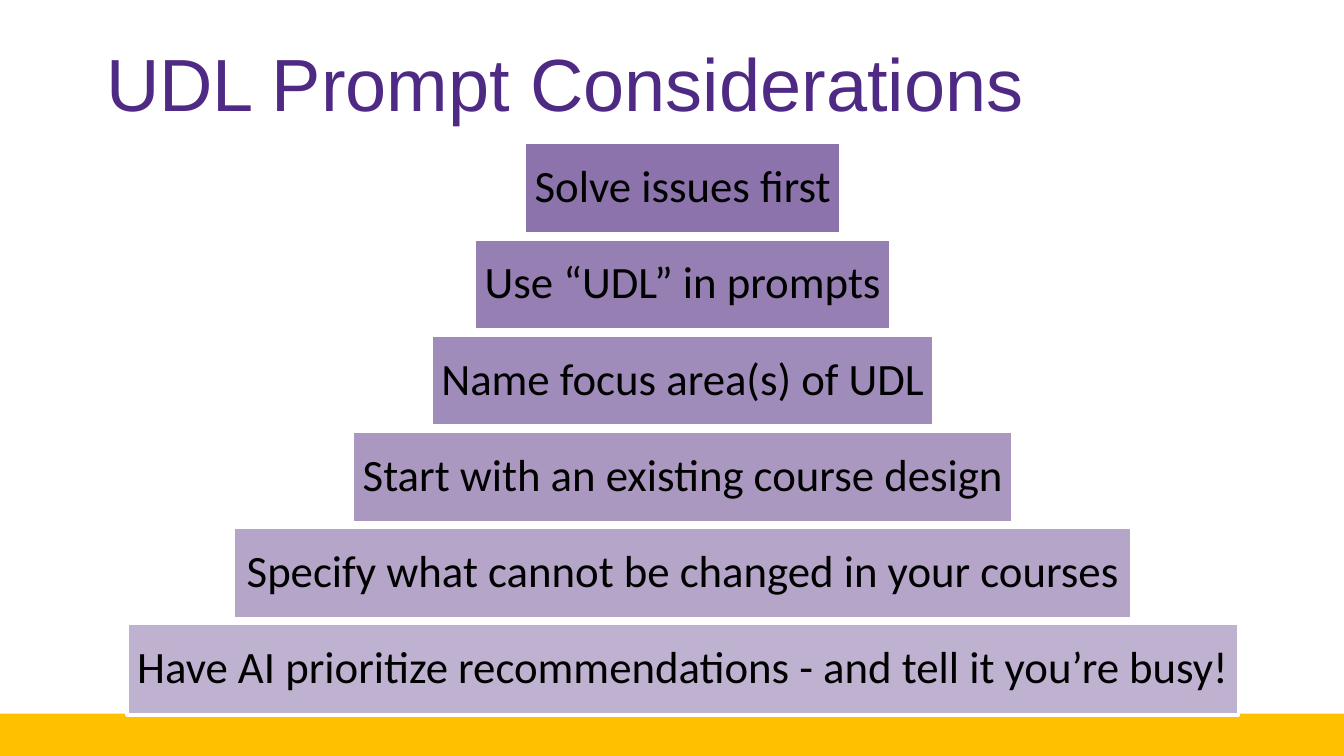
from lxml.etree import SubElement
from pptx import Presentation
from pptx.dml.color import RGBColor
from pptx.enum.shapes import MSO_SHAPE
from pptx.enum.text import MSO_ANCHOR, MSO_AUTO_SIZE, PP_ALIGN
from pptx.oxml.ns import qn
from pptx.util import Inches, Pt

COLORS = {
    "band": "FFC000",
    "title": "4E2A84",
    "step": "8064A2",
    "edge": "FFFFFF",
    "text": "000000",
}
STEPS = [
    ("Solve issues first", 2.36),
    ("Use “UDL” in prompts", 3.1),
    ("Name focus area(s) of UDL", 3.74),
    ("Start with an existing course design", 4.92),
    ("Specify what cannot be changed in your courses", 6.69),
    ("Have AI prioritize recommendations - and tell it you’re busy!", 8.27),
]
CENTER = 5.08
FIRST_TOP, LAST_TOP = 1.06, 4.64
STEP_HEIGHT = 0.68
FIRST_OPACITY, OPACITY_DROP = 90, 8


def color(name):
    return RGBColor.from_string(COLORS[name])


def style_text(paragraph, font_name, size, color_name):
    for run in paragraph.runs:
        run.font.name = font_name
        run.font.size = Pt(size)
        run.font.color.rgb = color(color_name)


def add_rectangle(slide, left, top, width, height, fill):
    rectangle = slide.shapes.add_shape(
        MSO_SHAPE.RECTANGLE, Inches(left), Inches(top), Inches(width), Inches(height)
    )
    rectangle.shadow.inherit = False
    rectangle.fill.solid()
    rectangle.fill.fore_color.rgb = color(fill)
    rectangle.line.fill.background()
    return rectangle


def set_opacity(shape, percent):
    fill_color = shape._element.spPr.find(qn("a:solidFill")).find(qn("a:srgbClr"))
    SubElement(fill_color, qn("a:alpha")).set("val", str(percent * 1000))


def set_title(slide, wording):
    title = slide.shapes.title
    title.left, title.top = Inches(0.69), Inches(0.3)
    title.width, title.height = Inches(8.13), Inches(0.62)
    frame = title.text_frame
    frame.text = wording
    frame.auto_size = MSO_AUTO_SIZE.NONE
    frame.vertical_anchor = MSO_ANCHOR.MIDDLE
    frame.paragraphs[0].alignment = PP_ALIGN.LEFT
    style_text(frame.paragraphs[0], "Arial", 39.6, "title")


def add_step(slide, wording, top, width, opacity):
    step = add_rectangle(slide, CENTER - width / 2, top, width, STEP_HEIGHT, "step")
    set_opacity(step, opacity)
    step.line.color.rgb = color("edge")
    step.line.width = Pt(2)
    frame = step.text_frame
    frame.text = wording
    frame.word_wrap = False
    frame.vertical_anchor = MSO_ANCHOR.MIDDLE
    frame.margin_left = frame.margin_right = Inches(0.07)
    frame.margin_top = frame.margin_bottom = Inches(0.07)
    paragraph = frame.paragraphs[0]
    paragraph.alignment = PP_ALIGN.CENTER
    paragraph.line_spacing = 0.9
    style_text(paragraph, "Calibri", 24, "text")


def main():
    deck = Presentation()
    deck.slide_width = Inches(10)
    deck.slide_height = deck.slide_width * 9 // 16
    slide = deck.slides.add_slide(deck.slide_layouts.get_by_name("Title Only"))
    add_rectangle(slide, -0.03, 5.31, 10.03, 0.32, "band")
    set_title(slide, "UDL Prompt Considerations")
    pitch = (LAST_TOP - FIRST_TOP) / (len(STEPS) - 1)
    for level, (wording, width) in enumerate(STEPS):
        opacity = FIRST_OPACITY - level * OPACITY_DROP
        add_step(slide, wording, FIRST_TOP + level * pitch, width, opacity)
    deck.save("out.pptx")


if __name__ == "__main__":
    main()
